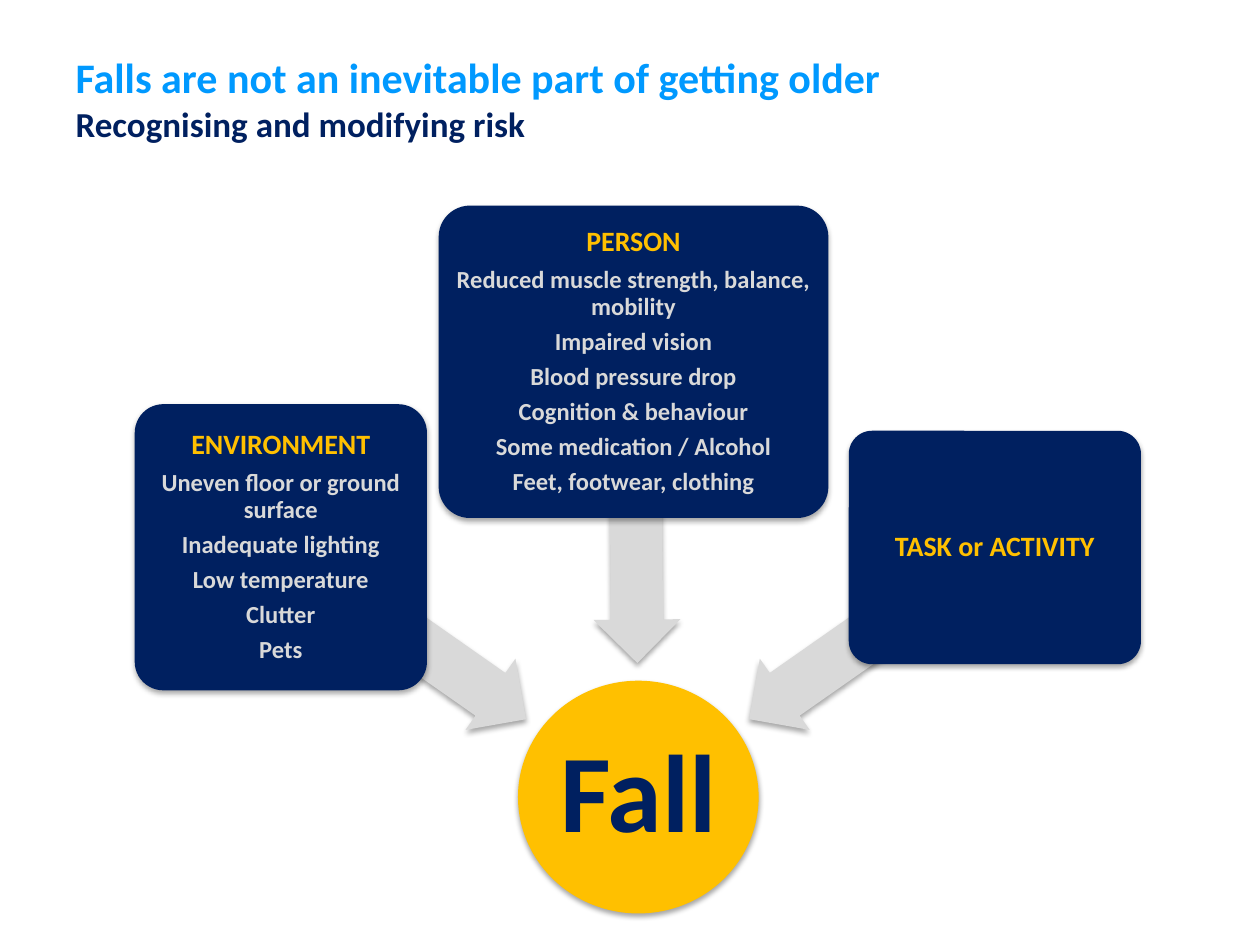
from lxml.etree import SubElement
from pptx import Presentation
from pptx.dml.color import RGBColor
from pptx.enum.shapes import MSO_SHAPE as Shape
from pptx.enum.text import MSO_ANCHOR as Anchor, MSO_AUTO_SIZE as AutoSize, PP_ALIGN as Align
from pptx.oxml.ns import qn
from pptx.util import Pt

FONT = "Calibri"
NAVY, AMBER, GREY, BLUE = "002060", "FFC000", "D9D9D9", "0099FF"

PERSON = ["PERSON", "Reduced muscle strength, balance, mobility", "Impaired vision",
          "Blood pressure drop", "Cognition & behaviour", "Some medication / Alcohol",
          "Feet, footwear, clothing"]
ENVIRONMENT = ["ENVIRONMENT", "Uneven floor or ground surface", "Inadequate lighting",
               "Low temperature", "Clutter", "Pets"]
TASK = ["TASK or ACTIVITY"]


def colour(value):
    """Turn a hex string into a colour."""
    return RGBColor.from_string(value)


def style_text(para, size, fill):
    """Give every run of a paragraph the bold slide font."""
    for span in para.runs:
        span.font.name, span.font.size, span.font.bold = FONT, Pt(size), True
        span.font.color.rgb = colour(fill)


def add_shadow(shape):
    """Replace the theme shadow with a soft one below the shape."""
    shape.shadow.inherit = False
    effects = shape._element.spPr.find(qn("a:effectLst"))
    outer = SubElement(effects, qn("a:outerShdw"), blurRad=str(Pt(3.1)), dist=str(Pt(1.8)),
                       dir="5400000", rotWithShape="0")
    black = SubElement(outer, qn("a:srgbClr"), val="000000")
    SubElement(black, qn("a:alpha"), val="35000")


def add_block(page, kind, box, fill, adjustments=()):
    """Place a filled, shadowed shape in the given box."""
    shape = page.shapes.add_shape(kind, *map(Pt, box))
    for index, value in enumerate(adjustments):
        shape.adjustments[index] = value
    shape.fill.solid()
    shape.fill.fore_color.rgb = colour(fill)
    shape.line.fill.background()
    add_shadow(shape)
    return shape


def write_centred(shape, lines, formats, inset):
    """Write centred lines, each with its own size and colour."""
    frame = shape.text_frame
    frame.word_wrap = True
    frame.vertical_anchor = Anchor.MIDDLE
    frame.margin_left = frame.margin_right = Pt(inset)
    frame.margin_top = frame.margin_bottom = Pt(inset)
    frame.text = "\n".join(lines)
    for para, (size, fill) in zip(frame.paragraphs, formats):
        para.alignment = Align.CENTER
        para.line_spacing = 0.9
        para.space_after = Pt(round(size * 0.35, 2))
        style_text(para, size, fill)


def add_title(page, box):
    """Place the two-line title in the given box."""
    title = page.shapes.title
    title.left, title.top, title.width, title.height = map(Pt, box)
    frame = title.text_frame
    frame.auto_size = AutoSize.NONE
    frame.vertical_anchor = Anchor.TOP
    frame.margin_top = Pt(8)
    frame.text = "Falls are not an inevitable part of getting older\nRecognising and modifying risk"
    for para, size, fill in zip(frame.paragraphs, (24, 20), (BLUE, NAVY)):
        para.alignment = Align.LEFT
        style_text(para, size, fill)


def add_outcome(page, box):
    """Place the circle that all factors lead to."""
    circle = add_block(page, Shape.OVAL, box, AMBER)
    write_centred(circle, ["Fall"], [(63, NAVY)], 2.9)


def add_factor(page, box, lines, arrow_box, angle):
    """Place a risk factor card in front of its arrow."""
    arrow = add_block(page, Shape.LEFT_ARROW, arrow_box, GREY, (0.6, 0.5))
    arrow.rotation = angle
    card = add_block(page, Shape.ROUNDED_RECTANGLE, box, NAVY, (0.1,))
    formats = [(16, AMBER)] + [(14, GREY)] * (len(lines) - 1)
    write_centred(card, lines, formats, 2.2)


def main():
    """Build the slide and save it."""
    deck = Presentation()
    deck.slide_width, deck.slide_height = Pt(720), Pt(540)
    page = deck.slides.add_slide(deck.slide_layouts[5])
    add_title(page, (36, 21.6, 648, 90))
    add_outcome(page, (296, 389, 137.5, 133))
    add_factor(page, (77, 231, 167, 163.5), ENVIRONMENT, (144.7, 337, 171.4, 49.7), 215)
    add_factor(page, (250.7, 117.5, 222.7, 178.5), PERSON, (277.5, 268, 172, 49.7), 269.5)
    add_factor(page, (485, 246.2, 167, 133.4), TASK, (412.6, 337, 171.4, 49.7), 325)
    deck.save("out.pptx")


if __name__ == "__main__":
    main()
